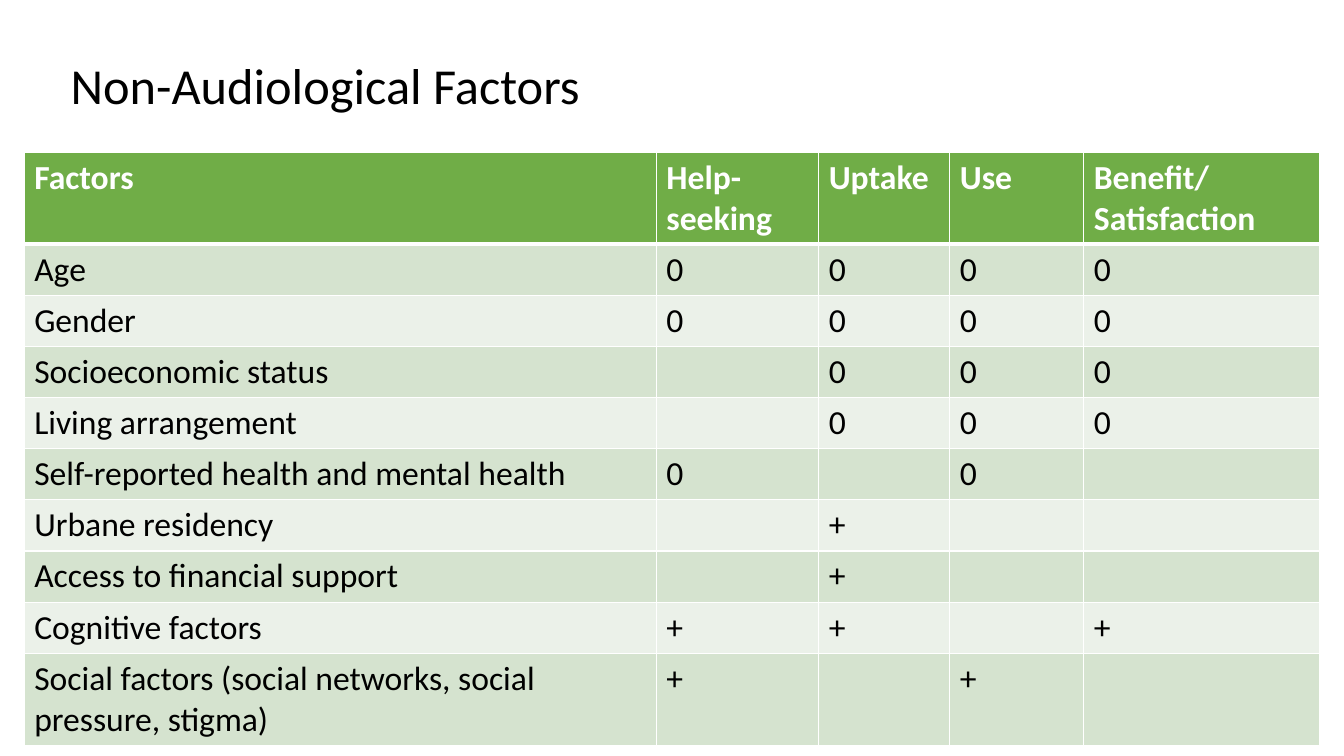
import lxml.etree
import pptx
import pptx.dml.color
import pptx.enum.text
import pptx.oxml.ns
import pptx.util

COLOURS = {
    "header": "70AD47",
    "odd": "D5E3CF",
    "even": "EBF1E9",
    "border": "FFFFFF",
    "header_text": "FFFFFF",
    "text": "000000",
}
FONT = "Calibri"
COLUMN_WIDTHS = [6.27, 1.61, 1.3, 1.33, 2.34]
ROW_HEIGHT = 0.41
TITLE_BOX = (0.6, 0.19, 11.4, 1.36)
TABLE_BOX = (0.24, 1.51, 12.86, 5.8)
FACTORS = [
    ("Factors", "Help-seeking", "Uptake", "Use", "Benefit/\nSatisfaction"),
    ("Age", "0", "0", "0", "0"),
    ("Gender", "0", "0", "0", "0"),
    ("Socioeconomic status", "", "0", "0", "0"),
    ("Living arrangement", "", "0", "0", "0"),
    ("Self-reported health and mental health", "0", "", "0", ""),
    ("Urbane residency", "", "+", "", ""),
    ("Access to financial support", "", "+", "", ""),
    ("Cognitive factors", "+", "+", "", "+"),
    ("Social factors (social networks, social pressure, stigma)", "+", "", "+", ""),
]


def colour(name):
    """Return the named colour of the palette."""
    return pptx.dml.color.RGBColor.from_string(COLOURS[name])


def format_font(font, colour_name, **values):
    """Set the typeface, colour and given values of a font."""
    for name, value in {"name": FONT, **values}.items():
        setattr(font, name, value)
    font.color.rgb = colour(colour_name)


def add_borders(cell, widths):
    """Draw the four cell borders, with widths in points by side."""
    properties = cell._tc.get_or_add_tcPr()
    for side, width in widths.items():
        line = lxml.etree.SubElement(
            properties, pptx.oxml.ns.qn(f"a:ln{side}"), w=str(pptx.util.Pt(width))
        )
        fill = lxml.etree.SubElement(line, pptx.oxml.ns.qn("a:solidFill"))
        lxml.etree.SubElement(fill, pptx.oxml.ns.qn("a:srgbClr"), val=COLOURS["border"])


def fill_cell(cell, text, row_index):
    """Write and format one cell according to its row."""
    is_header = row_index == 0
    add_borders(cell, {
        "L": 1, "R": 1,
        "T": 3 if row_index == 1 else 1,
        "B": 3 if is_header else 1,
    })
    cell.fill.solid()
    cell.fill.fore_color.rgb = colour(
        "header" if is_header else "odd" if row_index % 2 else "even"
    )
    cell.text = text
    for paragraph in cell.text_frame.paragraphs:
        format_font(
            paragraph.font, "header_text" if is_header else "text",
            size=pptx.util.Pt(24), bold=is_header,
        )
        for run in paragraph.runs:
            format_font(
                run.font, "header_text" if is_header else "text",
                size=pptx.util.Pt(24), bold=is_header,
            )


def add_title(slide, box, text):
    """Place the title placeholder in its box."""
    title = slide.shapes.title
    for name, length in zip(("left", "top", "width", "height"), box):
        setattr(title, name, pptx.util.Inches(length))
    title.text_frame.text = text
    title.text_frame.vertical_anchor = pptx.enum.text.MSO_ANCHOR.MIDDLE
    paragraph = title.text_frame.paragraphs[0]
    paragraph.alignment = pptx.enum.text.PP_ALIGN.LEFT
    paragraph.line_spacing = 0.9
    format_font(paragraph.runs[0].font, "text", size=pptx.util.Pt(36))


def add_factor_table(slide, box, rows):
    """Place the table of factors in its box."""
    frame = slide.shapes.add_table(
        len(rows), len(COLUMN_WIDTHS), *map(pptx.util.Inches, box)
    )
    table = frame.table
    for column, width in zip(table.columns, COLUMN_WIDTHS):
        column.width = pptx.util.Inches(width)
    for row_index, (row, texts) in enumerate(zip(table.rows, rows)):
        row.height = pptx.util.Inches(ROW_HEIGHT)
        for cell, text in zip(row.cells, texts):
            fill_cell(cell, text, row_index)
    frame.height = pptx.util.Inches(box[3])


def main():
    """Build and save the presentation."""
    presentation = pptx.Presentation()
    presentation.slide_width = pptx.util.Inches(13.33)
    presentation.slide_height = pptx.util.Inches(7.5)
    slide = presentation.slides.add_slide(presentation.slide_layouts[5])
    add_title(slide, TITLE_BOX, "Non-Audiological Factors")
    add_factor_table(slide, TABLE_BOX, FACTORS)
    presentation.save("out.pptx")


if __name__ == "__main__":
    main()
